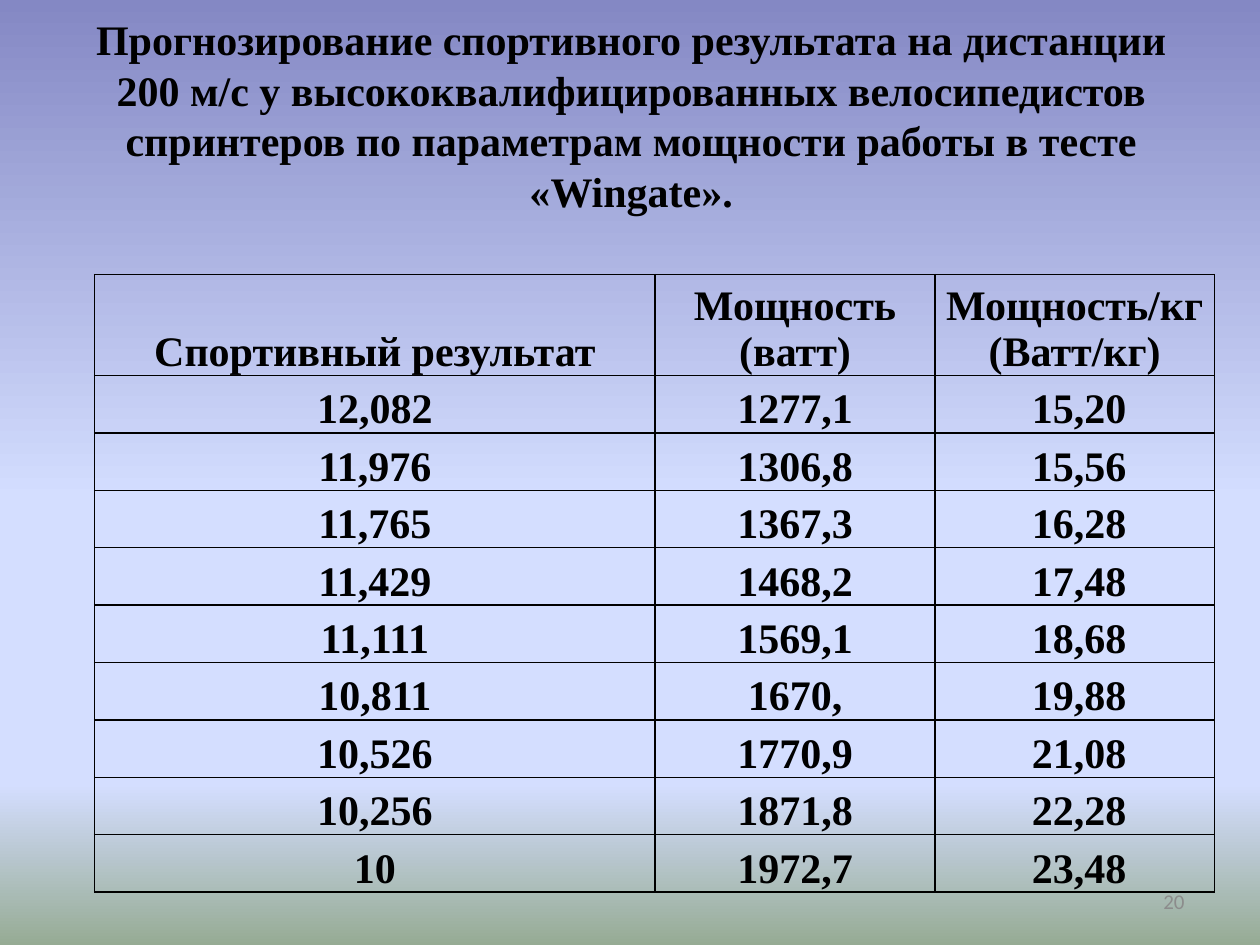
from lxml import etree
from pptx import Presentation
from pptx.dml.color import RGBColor
from pptx.enum.text import MSO_ANCHOR, PP_ALIGN
from pptx.oxml.ns import qn
from pptx.util import Inches, Pt

CENTER, RIGHT = PP_ALIGN.CENTER, PP_ALIGN.RIGHT
MIDDLE, BOTTOM = MSO_ANCHOR.MIDDLE, MSO_ANCHOR.BOTTOM
BLACK = RGBColor(0x00, 0x00, 0x00)
GRAY = RGBColor(0x8C, 0x8C, 0x8C)
SKY = RGBColor(0x84, 0x88, 0xC4)
PALE = RGBColor(0xD4, 0xDE, 0xFF)
GRASS = RGBColor(0x96, 0xAB, 0x94)

BACKGROUND = [(0, SKY), (53, PALE), (83, PALE), (100, GRASS)]
TITLE = ("Прогнозирование спортивного результата на дистанции 200 м/с "
         "у высококвалифицированных велосипедистов спринтеров "
         "по параметрам мощности работы в тесте «Wingate».")
PAGE = "20"
HEADER = ("Спортивный результат", "Мощность (ватт)", "Мощность/кг\n(Ватт/кг)")
RESULTS = [
    ("12,082", "1277,1", "15,20"),
    ("11,976", "1306,8", "15,56"),
    ("11,765", "1367,3", "16,28"),
    ("11,429", "1468,2", "17,48"),
    ("11,111", "1569,1", "18,68"),
    ("10,811", "1670,", "19,88"),
    ("10,526", "1770,9", "21,08"),
    ("10,256", "1871,8", "22,28"),
    ("10", "1972,7", "23,48"),
]
COLUMN_WIDTHS = (4.45, 2.22, 2.22)
TABLE_HEIGHT, HEADER_HEIGHT = 4.9, 0.8


def write(frame, text, align, size=24, font="Times New Roman", color=BLACK,
          bold=True):
    frame.word_wrap = True
    frame.text = text
    for paragraph in frame.paragraphs:
        paragraph.alignment = align
        paragraph.line_spacing = 1.0
        for run in paragraph.runs:
            run.font.size = Pt(size)
            run.font.name = font
            run.font.bold = bold
            run.font.color.rgb = color


def add_text(slide, box, text, align, **style):
    frame = slide.shapes.add_textbox(*map(Inches, box)).text_frame
    frame.vertical_anchor = MIDDLE
    write(frame, text, align, **style)


def paint_background(slide):
    fill = slide.background.fill
    fill.gradient()
    fill.gradient_angle = 270
    stops = slide.element.find(".//" + qn("a:gsLst"))
    for stop in list(stops):
        stops.remove(stop)
    for percent, color in BACKGROUND:
        stop = etree.SubElement(stops, qn("a:gs"), pos=str(percent * 1000))
        etree.SubElement(stop, qn("a:srgbClr"), val=str(color))


def add_borders(cell):
    properties = cell._tc.get_or_add_tcPr()
    for side in ("lnL", "lnR", "lnT", "lnB"):
        line = etree.SubElement(properties, qn("a:" + side), w=str(Pt(1)))
        fill = etree.SubElement(line, qn("a:solidFill"))
        etree.SubElement(fill, qn("a:srgbClr"), val=str(BLACK))


def add_results(slide):
    rows = [HEADER] + RESULTS
    row_height = (TABLE_HEIGHT - HEADER_HEIGHT) / len(RESULTS)
    heights = [HEADER_HEIGHT] + [row_height] * len(RESULTS)
    table = slide.shapes.add_table(
        len(rows), len(HEADER), Inches(0.75), Inches(2.18),
        Inches(sum(COLUMN_WIDTHS)), Inches(TABLE_HEIGHT)).table
    table.first_row = table.horz_banding = False
    for column, width in zip(table.columns, COLUMN_WIDTHS):
        column.width = Inches(width)
    for r, (values, height) in enumerate(zip(rows, heights)):
        table.rows[r].height = Inches(height)
        for c, value in enumerate(values):
            cell = table.cell(r, c)
            per_kilo = r > 0 and c == 2
            add_borders(cell)
            cell.fill.background()
            cell.vertical_anchor = BOTTOM
            cell.margin_left = Inches(0.08 if per_kilo else 0.07)
            cell.margin_right = Inches(0.01 if per_kilo else 0.07)
            cell.margin_top = cell.margin_bottom = 0
            write(cell.text_frame, value, CENTER)


def main():
    deck = Presentation()
    deck.slide_width, deck.slide_height = Inches(10), Inches(7.5)
    slide = deck.slides.add_slide(deck.slide_layouts[6])
    paint_background(slide)
    add_text(slide, (0.51, 0.11, 9, 1.6), TITLE, CENTER)
    add_text(slide, (7.17, 6.95, 2.33, 0.4), PAGE, RIGHT,
             size=12, font="Calibri", color=GRAY, bold=False)
    add_results(slide)
    deck.save("out.pptx")


if __name__ == "__main__":
    main()
